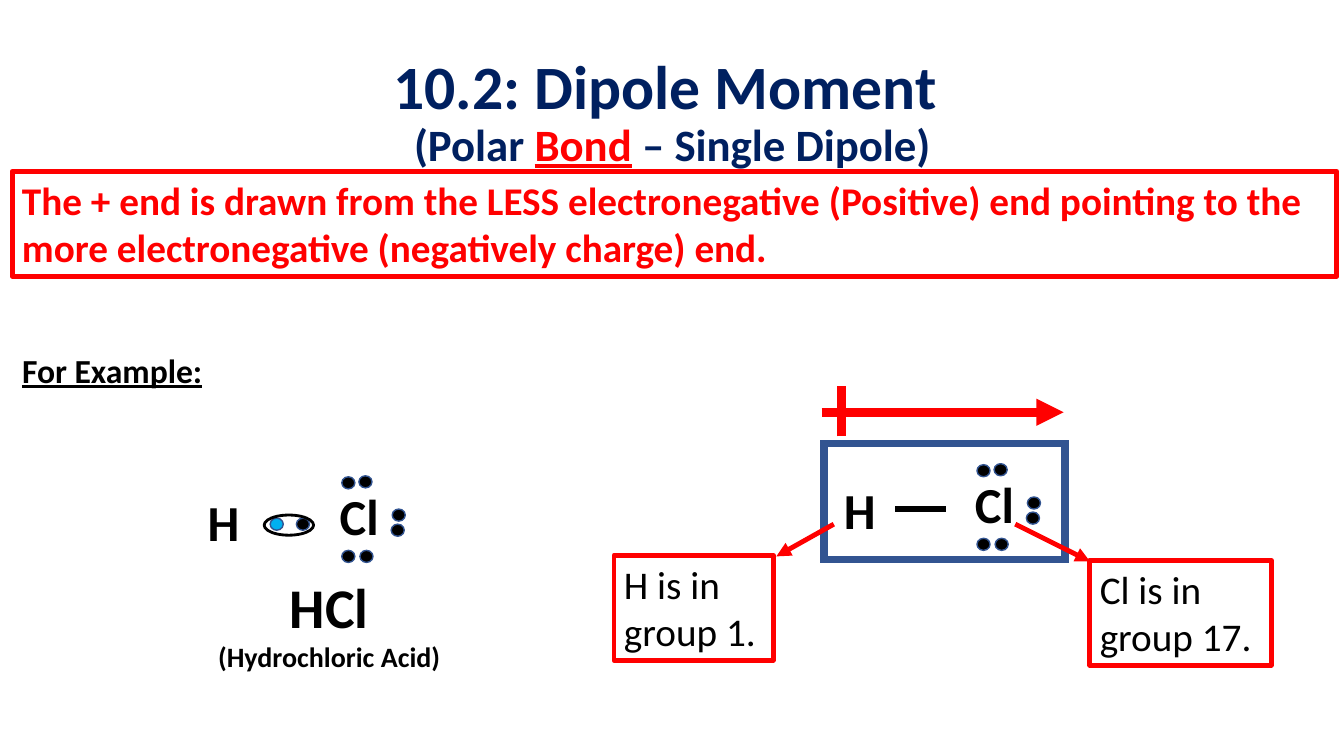
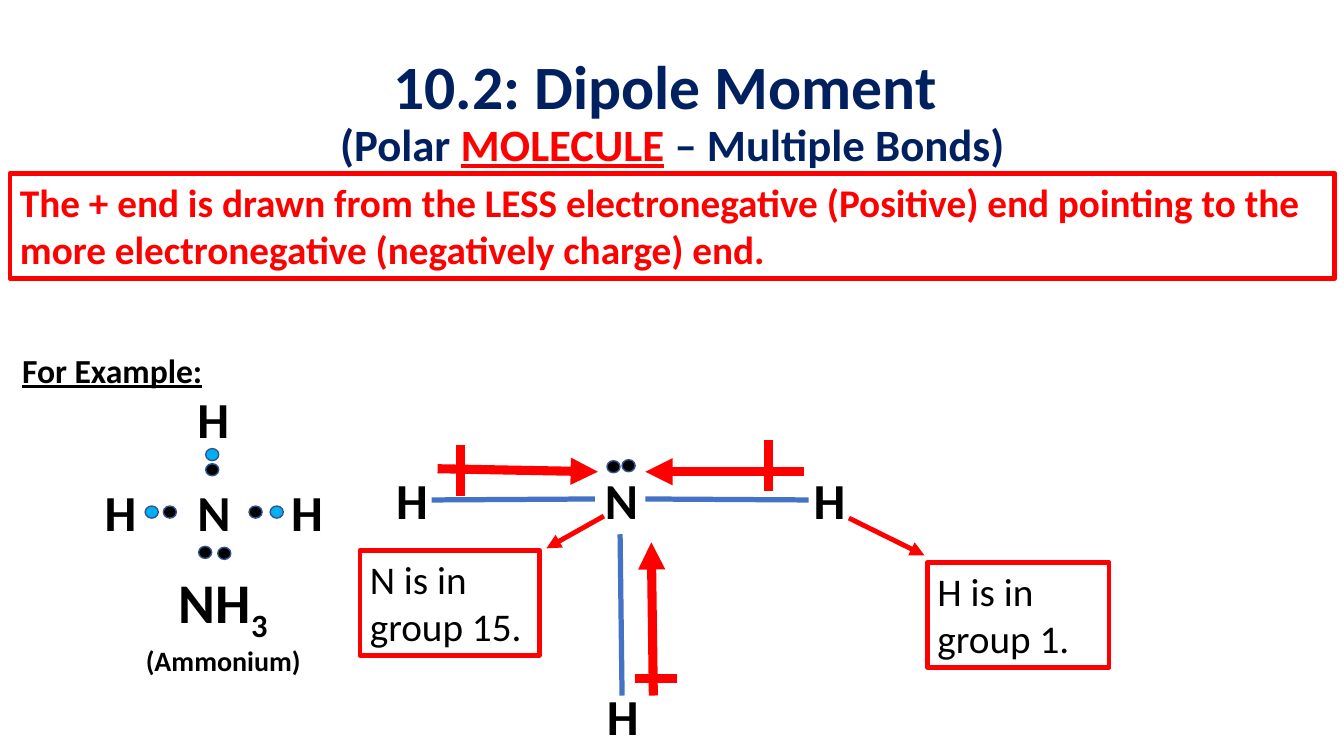
from lxml.etree import SubElement
from pptx import Presentation
from pptx.dml.color import RGBColor
from pptx.enum.shapes import MSO_CONNECTOR, MSO_SHAPE
from pptx.enum.text import MSO_ANCHOR, PP_ALIGN
from pptx.oxml.ns import qn
from pptx.util import Inches, Pt

FONT = "Calibri"
NAVY, RED, BLACK = "002060", "FF0000", "000000"
CYAN, BLUE, EDGE = "00B0F0", "4472C4", "325491"
DOT = (0.13, 0.12)
RULE = ("The + end is drawn from the LESS electronegative (Positive) end "
        "pointing to the more electronegative (negatively charge) end.")

# Chlorine's lone electrons, measured from the corner of its label
CL_DOTS = [(0.62, 0.29), (0.61, 0.44), (0.29, -0.04),
           (0.12, -0.03), (0.12, 0.7), (0.3, 0.7)]
CL_AT = [(3.27, 4.76), (9.57, 4.64)]

SLIDES = [
    {
        "subtitle": ("(Polar ", "Bond", " – Single Dipole)"),
        "rule_at": (0.12, 1.7),
        "atoms": [("H", 1.96, 4.82), ("H", 8.27, 4.7)] + [("Cl", x, y) for x, y in CL_AT],
        "dots": [(x + dx, y + dy, BLACK) for x, y in CL_AT for dx, dy in CL_DOTS]
                + [(2.94, 5.14, BLACK), (2.68, 5.14, CYAN)],
        "formula": ((2.04, 5.63, 2.45, 1.11), "HCl", "", "(Hydrochloric Acid)"),
        "frames": [(MSO_SHAPE.OVAL, (2.62, 5.11, 0.49, 0.2), BLACK, 2),
                   (MSO_SHAPE.RECTANGLE, (8.17, 4.4, 2.39, 1.15), EDGE, 5.5)],
        "bonds": [((8.88, 5.05), (9.38, 5.05), BLACK, 4.5)],
        "notes": [("H is in group 1.", (6.09, 5.51, 1.58, 1.04), (8.27, 5.2), (7.7, 5.52)),
                  ("Cl is in group 17.", (10.81, 5.56, 1.8, 1.04), (10.07, 5.2), (10.81, 5.57))],
        # arrow start, arrow end, crossbar start, crossbar end
        "dipoles": [((8.15, 4.09), (10.55, 4.09), (8.35, 4.33), (8.35, 3.83))],
    },
    {
        "subtitle": ("(Polar ", "MOLECULE", " – Multiple Bonds)"),
        "rule_at": (0.1, 1.72),
        "atoms": [("N", 1.86, 4.72), ("H", 1.86, 3.8), ("H", 2.79, 4.72), ("H", 0.94, 4.72),
                  ("N", 5.9, 4.6), ("H", 5.92, 6.75), ("H", 7.97, 4.6), ("H", 3.83, 4.6)],
        "dots": [(2.04, 4.6, BLACK), (2.47, 5.02, BLACK), (1.62, 5.02, BLACK),
                 (1.97, 5.42, BLACK), (2.16, 5.43, BLACK), (2.04, 4.45, CYAN),
                 (2.68, 5.02, CYAN), (1.44, 5.02, CYAN),
                 (6.02, 4.57, BLACK), (6.17, 4.56, BLACK)],
        "formula": ((1.3, 5.58, 1.83, 1.11), "NH", "3", "(Ammonium)"),
        "frames": [],
        "bonds": [((6.4, 4.95), (8.02, 4.96), BLUE, 3.75),
                  ((4.28, 4.96), (5.9, 4.95), BLUE, 3.75),
                  ((6.15, 5.3), (6.17, 6.9), BLUE, 3.75)],
        "notes": [("N is in group 15.", (3.57, 5.46, 1.78, 1.04), (5.99, 5.12), (5.42, 5.44)),
                  ("H is in group 1.", (9.2, 5.58, 1.8, 1.04), (8.42, 5.14), (9.17, 5.51))],
        "dipoles": [((7.97, 4.68), (6.4, 4.68), (7.62, 4.87), (7.62, 4.37)),
                    ((6.48, 6.9), (6.46, 5.38), (6.71, 6.73), (6.3, 6.73)),
                    ((4.34, 4.65), (5.93, 4.68), (4.57, 4.92), (4.57, 4.41))],
    },
]


def rgb(color):
    return RGBColor.from_string(color)


def inches(values):
    return [Inches(v) for v in values]


def style(font, size, color=BLACK, bold=True, underline=None):
    font.name, font.size, font.bold, font.underline = FONT, Pt(size), bold, underline
    font.color.rgb = rgb(color)


def add_text(s, box, text="", size=36, **look):
    sp = s.shapes.add_textbox(*inches(box))
    tf = sp.text_frame
    tf.word_wrap = True
    p = tf.paragraphs[0]
    p.text = text
    style(p.font, size, **look)
    return sp


def add_box(s, box, text, **look):
    sp = add_text(s, box, text, 28, **look)
    sp.line.color.rgb = rgb(RED)
    sp.line.width = Pt(3.5)


def add_outline(s, kind, box, color, width, fill=None):
    sp = s.shapes.add_shape(kind, *inches(box))
    sp.shadow.inherit = False
    if fill:
        sp.fill.solid()
        sp.fill.fore_color.rgb = rgb(fill)
    else:
        sp.fill.background()
    sp.line.color.rgb = rgb(color)
    sp.line.width = Pt(width)
    if kind == MSO_SHAPE.RECTANGLE:  # sharp corners
        SubElement(sp.line._get_or_add_ln(), qn("a:miter"), lim="800000")


def add_line(s, start, end, color, width, arrow=False):
    c = s.shapes.add_connector(MSO_CONNECTOR.STRAIGHT, *inches(start + end))
    c.line.color.rgb = rgb(color)
    c.line.width = Pt(width)
    if arrow:
        SubElement(c.line._get_or_add_ln(), qn("a:tailEnd"), type="triangle")
    SubElement(c._element.spPr, qn("a:effectLst"))


def add_title(s, subtitle):
    tf = add_text(s, (0.92, 0.4, 11.5, 1.45)).text_frame
    tf.vertical_anchor = MSO_ANCHOR.MIDDLE
    p = tf.paragraphs[0]
    p.alignment, p.line_spacing = PP_ALIGN.CENTER, 0.9
    r = p.add_run()
    r.text = "10.2: Dipole Moment "
    style(r.font, 44, NAVY)
    p.add_line_break()
    for text, color in zip(subtitle, (NAVY, RED, NAVY)):
        r = p.add_run()
        r.text = text
        style(r.font, 32, color, underline=color == RED)


def add_formula(s, box, symbol, subscript, name):
    tf = add_text(s, box, symbol, 40).text_frame
    p = tf.paragraphs[0]
    p.alignment = PP_ALIGN.CENTER
    if subscript:
        r = p.add_run()
        r.text = subscript
        r.font._element.set("baseline", "-25000")
    p = tf.add_paragraph()
    p.text, p.alignment = name, PP_ALIGN.CENTER
    style(p.font, 20)


def build(prs, data):
    s = prs.slides.add_slide(prs.slide_layouts[6])
    # Heading and rule
    add_title(s, data["subtitle"])
    add_box(s, data["rule_at"] + (13.14, 1.04), RULE, color=RED)
    add_text(s, (0.12, 3.42, 2.09, 0.5), "For Example:", 24, underline=True)
    # Molecules
    for symbol, x, y in data["atoms"]:
        add_text(s, (x, y, 0.62 if symbol == "Cl" else 0.49, 0.71), symbol)
    for x, y, fill in data["dots"]:
        add_outline(s, MSO_SHAPE.OVAL, (x, y) + DOT, EDGE, 1, fill)
    add_formula(s, *data["formula"])
    for frame in data["frames"]:
        add_outline(s, *frame)
    for bond in data["bonds"]:
        add_line(s, *bond)
    # Group notes with pointers
    for text, box, start, end in data["notes"]:
        add_line(s, start, end, RED, 3.5, arrow=True)
        add_box(s, box, text, bold=False)
    # Dipole arrows with crossbars
    for start, end, bar_start, bar_end in data["dipoles"]:
        add_line(s, start, end, RED, 6.5, arrow=True)
        add_line(s, bar_start, bar_end, RED, 6.5)


def main():
    prs = Presentation()
    prs.slide_width, prs.slide_height = inches((13.33, 7.5))
    for data in SLIDES:
        build(prs, data)
    prs.save("out.pptx")


if __name__ == "__main__":
    main()
